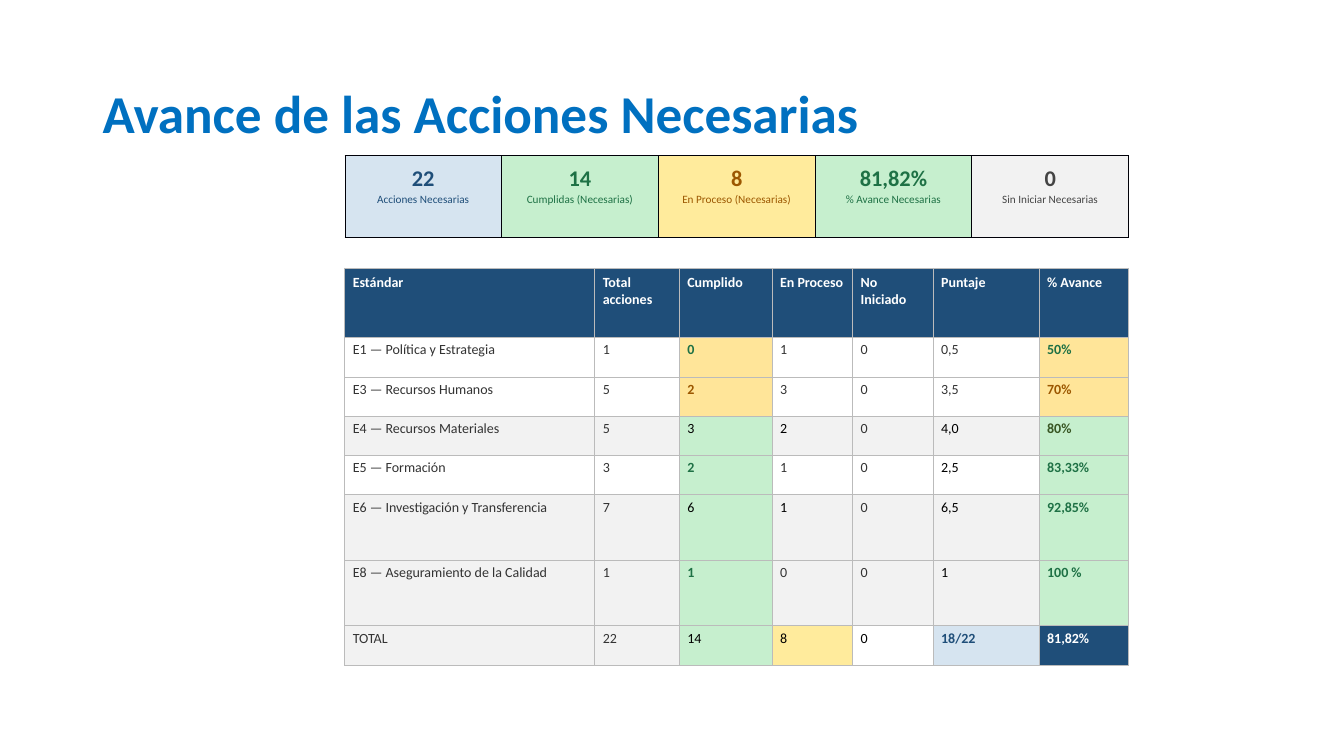
import pptx
import pptx.dml.color
import pptx.enum.text
import pptx.oxml
import pptx.oxml.ns
import pptx.util

Cm = pptx.util.Cm
Pt = pptx.util.Pt
Align = pptx.enum.text.PP_ALIGN
Anchor = pptx.enum.text.MSO_ANCHOR

NAVY, GREEN, BROWN, WHITE = "1F4E79", "1E7145", "9C5700", "FFFFFF"
SKY, MINT, LEMON, GREY = "D6E4F0", "C6EFCE", "FFEB9C", "F2F2F2"

FILLS = {"w": WHITE, "x": GREY, "m": MINT, "a": "FFE599",
         "l": LEMON, "s": SKY, "n": NAVY}
INKS = {"t": ("333333", False), "k": ("000000", False),
        "g": (GREEN, True), "o": (BROWN, True), "d": ("385623", True),
        "n": (NAVY, True), "w": (WHITE, True)}

CARDS = [
    ("22", "Acciones Necesarias", NAVY, SKY),
    ("14", "Cumplidas (Necesarias)", GREEN, MINT),
    ("8", "En Proceso (Necesarias)", BROWN, LEMON),
    ("81,82%", "% Avance Necesarias", GREEN, MINT),
    ("0", "Sin Iniciar Necesarias", "444444", GREY),
]
HEADS = ["Estándar", "Total acciones", "Cumplido", "En Proceso",
         "No Iniciado", "Puntaje", "% Avance"]
ROWS = [
    (["E1 — Política y Estrategia", "1", "0", "1", "0", "0,5", "50%"],
     "wwawwwa", "ttgtttg"),
    (["E3 — Recursos Humanos", "5", "2", "3", "0", "3,5", "70%"],
     "wwawwwa", "ttottto"),
    (["E4 — Recursos Materiales", "5", "3", "2", "0", "4,0", "80%"],
     "xxmxxxm", "ttkktkd"),
    (["E5 — Formación", "3", "2", "1", "0", "2,5", "83,33%"],
     "wwmwwwm", "ttgttkg"),
    (["E6 — Investigación y Transferencia", "7", "6", "1", "0", "6,5", "92,85%"],
     "xxmxxxm", "ttkktkg"),
    (["E8 — Aseguramiento de la Calidad", "1", "1", "0", "0", "1", "100 %"],
     "xxmxxxm", "ttgttkg"),
    (["TOTAL", "22", "14", "8", "0", "18/22", "81,82%"],
     "xxmlwsn", "ttkkknw"),
]


def hue(code):
    return pptx.dml.color.RGBColor.from_string(code)


def put(thing, **vals):
    for name, val in vals.items():
        setattr(thing, name, val)


class Deck:
    font = "Calibri"

    def __init__(self):
        self.file = pptx.Presentation()
        put(self.file, slide_width=Cm(33.87), slide_height=Cm(19.05))
        self.slide = self.file.slides.add_slide(self.file.slide_layouts[5])

    def text(self, para, words, size, ink, bold):
        run = para.add_run()
        run.text = words
        put(run.font, name=self.font, size=Pt(size), bold=bold)
        run.font.color.rgb = hue(ink)

    def title(self, words, left, top, width, height):
        shape = self.slide.shapes.title
        put(shape, left=Cm(left), top=Cm(top), width=Cm(width), height=Cm(height))
        put(shape.text_frame, vertical_anchor=Anchor.MIDDLE, word_wrap=True,
            auto_size=pptx.enum.text.MSO_AUTO_SIZE.NONE)
        para = shape.text_frame.paragraphs[0]
        put(para, alignment=Align.LEFT, line_spacing=0.9)
        self.text(para, words, 38, "0070C0", True)

    def table(self, left, top, cols, rows):
        frame = self.slide.shapes.add_table(
            len(rows), len(cols), Cm(left), Cm(top), Cm(sum(cols)), Cm(sum(rows)))
        grid = frame.table
        put(grid, first_row=False, horz_banding=False)
        for col, width in zip(grid.columns, cols):
            col.width = Cm(width)
        for row, height in zip(grid.rows, rows):
            row.height = Cm(height)
        return grid

    def cell(self, cell, lines, fill, pad, edge, align=Align.LEFT):
        side, end = map(Cm, pad)
        put(cell, margin_left=side, margin_right=side,
            margin_top=end, margin_bottom=end)
        self.edge(cell, *edge)
        cell.fill.solid()
        cell.fill.fore_color.rgb = hue(fill)
        frame = cell.text_frame
        for num, line in enumerate(lines):
            para = frame.add_paragraph() if num else frame.paragraphs[0]
            para.alignment = align
            self.text(para, *line)

    def edge(self, cell, ink, width):
        props = cell._tc.get_or_add_tcPr()
        for side in "LRTB":
            props.append(pptx.oxml.parse_xml(
                f'<a:ln{side} {pptx.oxml.ns.nsdecls("a")} w="{Pt(width)}">'
                f'<a:solidFill><a:srgbClr val="{ink}"/></a:solidFill>'
                f'</a:ln{side}>'))

    def cards(self, left, top):
        grid = self.table(left, top, [3.95] * len(CARDS), [2.06])
        for num, (count, label, ink, fill) in enumerate(CARDS):
            lines = [(count, 16, ink, True), (label, 8, ink, False)]
            self.cell(grid.cell(0, num), lines, fill, (0.28, 0.25),
                      ("000008", 0.5), Align.CENTER)

    def scores(self, left, top):
        cols = [6.3, 2.13, 2.34, 2.03, 2.03, 2.67, 2.26]
        high = [1.75] + [0.99] * 4 + [1.65, 1.65, 0.99]
        grid = self.table(left, top, cols, high)
        data = [(HEADS, "n" * len(HEADS), "w" * len(HEADS))] + ROWS
        for row, (texts, fills, inks) in enumerate(data):
            pad = (0.2, 0.1 if row else 0.15)
            for col, (words, fill, ink) in enumerate(zip(texts, fills, inks)):
                self.cell(grid.cell(row, col), [(words, 10, *INKS[ink])],
                          FILLS[fill], pad, ("BBBBBB", 0.75))


def main():
    deck = Deck()
    deck.title("Avance de las Acciones Necesarias", 2.33, 1.93, 29.21, 2)
    deck.cards(8.69, 3.92)
    deck.scores(8.69, 6.76)
    deck.file.save("out.pptx")


if __name__ == "__main__":
    main()
